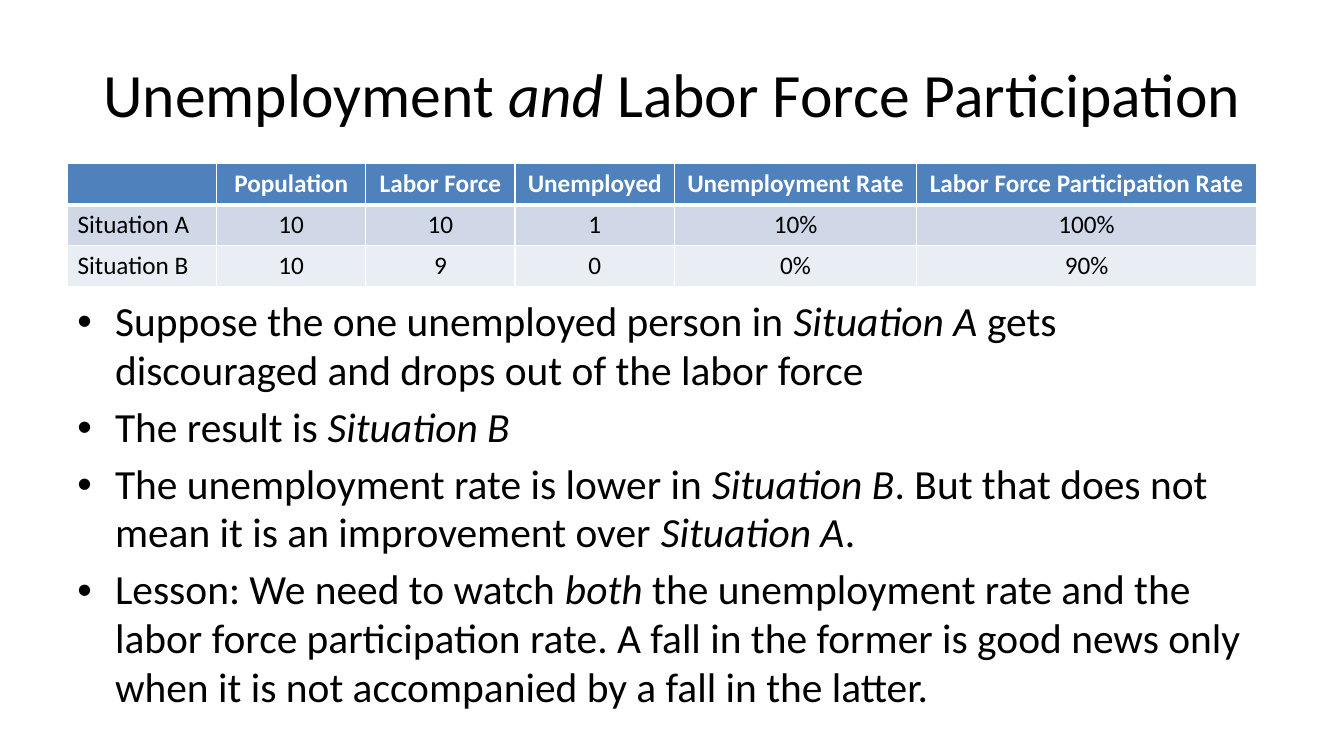
from pptx import Presentation
from pptx.dml.color import RGBColor
from pptx.enum.text import MSO_ANCHOR, PP_ALIGN
from pptx.oxml import parse_xml
from pptx.oxml.ns import nsdecls
from pptx.util import Cm, Pt

BLACK = RGBColor(0, 0, 0)
WHITE = RGBColor(255, 255, 255)
BLUE = RGBColor(0x4F, 0x81, 0xBD)
BANDS = [RGBColor(0xD0, 0xD8, 0xE8), RGBColor(0xE9, 0xED, 0xF4)]
FONT = "Calibri"

# Asterisks enclose italic words
TITLE = "Unemployment *and* Labor Force Participation"
ROWS = [
    ["", "Population", "Labor Force", "Unemployed", "Unemployment Rate",
     "Labor Force Participation Rate"],
    ["Situation A", "10", "10", "1", "10%", "100%"],
    ["Situation B", "10", "9", "0", "0%", "90%"],
]
WIDTHS = [3.76, 3.76, 3.76, 4.02, 6.1, 8.57]
POINTS = [
    "Suppose the one unemployed person in *Situation A* gets discouraged "
    "and drops out of the labor force",
    "The result is *Situation B*",
    "The unemployment rate is lower in *Situation B*. But that does not mean "
    "it is an improvement over *Situation A*.",
    "Lesson: We need to watch *both* the unemployment rate and the labor force "
    "participation rate. A fall in the former is good news only when it is not "
    "accompanied by a fall in the latter.",
]


def style(font, size, color=BLACK, bold=False):
    font.name, font.size, font.bold = FONT, Pt(size), bold
    font.color.rgb = color


def write(para, text, size):
    for i, part in enumerate(text.split("*")):
        run = para.add_run()
        run.text = part
        style(run.font, size)
        run.font.italic = i % 2 == 1


def place(shape, box):
    shape.left, shape.top, shape.width, shape.height = map(Cm, box)


def add_title(slide, box):
    title = slide.shapes.title
    place(title, box)
    frame = title.text_frame
    frame.vertical_anchor = MSO_ANCHOR.MIDDLE
    para = frame.paragraphs[0]
    para.alignment = PP_ALIGN.CENTER
    write(para, TITLE, 44)


def add_edges(cell, head):
    props = cell._tc.get_or_add_tcPr()
    # Borders come before the fill; the header has a thick bottom edge
    for i, side in enumerate("LRTB"):
        width = Pt(3 if head and side == "B" else 1)
        props.insert(i, parse_xml(
            f'<a:ln{side} {nsdecls("a")} w="{width}"><a:solidFill>'
            f'<a:srgbClr val="{WHITE}"/></a:solidFill></a:ln{side}>'))


def add_grid(slide, box):
    table = slide.shapes.add_table(len(ROWS), len(WIDTHS), *map(Cm, box)).table
    for col, width in zip(table.columns, WIDTHS):
        col.width = Cm(width)
    for r, row in enumerate(ROWS):
        head = r == 0
        for c, text in enumerate(row):
            cell = table.cell(r, c)
            cell.fill.solid()
            cell.fill.fore_color.rgb = BLUE if head else BANDS[r - 1]
            add_edges(cell, head)
            para = cell.text_frame.paragraphs[0]
            para.text = text
            para.alignment = PP_ALIGN.CENTER if head or c else PP_ALIGN.LEFT
            style(para.font, 18, WHITE if head else BLACK, head)
            for run in para.runs:
                style(run.font, 18, WHITE if head else BLACK, head)


def add_points(slide, box):
    frame = slide.shapes.add_textbox(*map(Cm, box)).text_frame
    frame.word_wrap = True
    for i, text in enumerate(POINTS):
        para = frame.add_paragraph() if i else frame.paragraphs[0]
        para.space_before = Pt(5.9)
        para.line_spacing = 0.98
        write(para, text, 29.6)
        # Hanging bullet
        props = para._p.get_or_add_pPr()
        props.set("marL", str(Cm(0.95)))
        props.set("indent", str(-Cm(0.95)))
        props.append(parse_xml(f'<a:buFont {nsdecls("a")} typeface="Arial"/>'))
        props.append(parse_xml(f'<a:buChar {nsdecls("a")} char="•"/>'))


def main():
    deck = Presentation()
    deck.slide_width, deck.slide_height = Cm(33.87), Cm(19.05)
    slide = deck.slides.add_slide(deck.slide_layouts[5])
    left = 1.7
    add_title(slide, (left, 0.76, 30.48, 3.18))
    add_grid(slide, (left, 4.13, sum(WIDTHS), 3.1))
    add_points(slide, (left, 7.37, 30.48, 9.65))
    deck.save("out.pptx")


if __name__ == "__main__":
    main()
